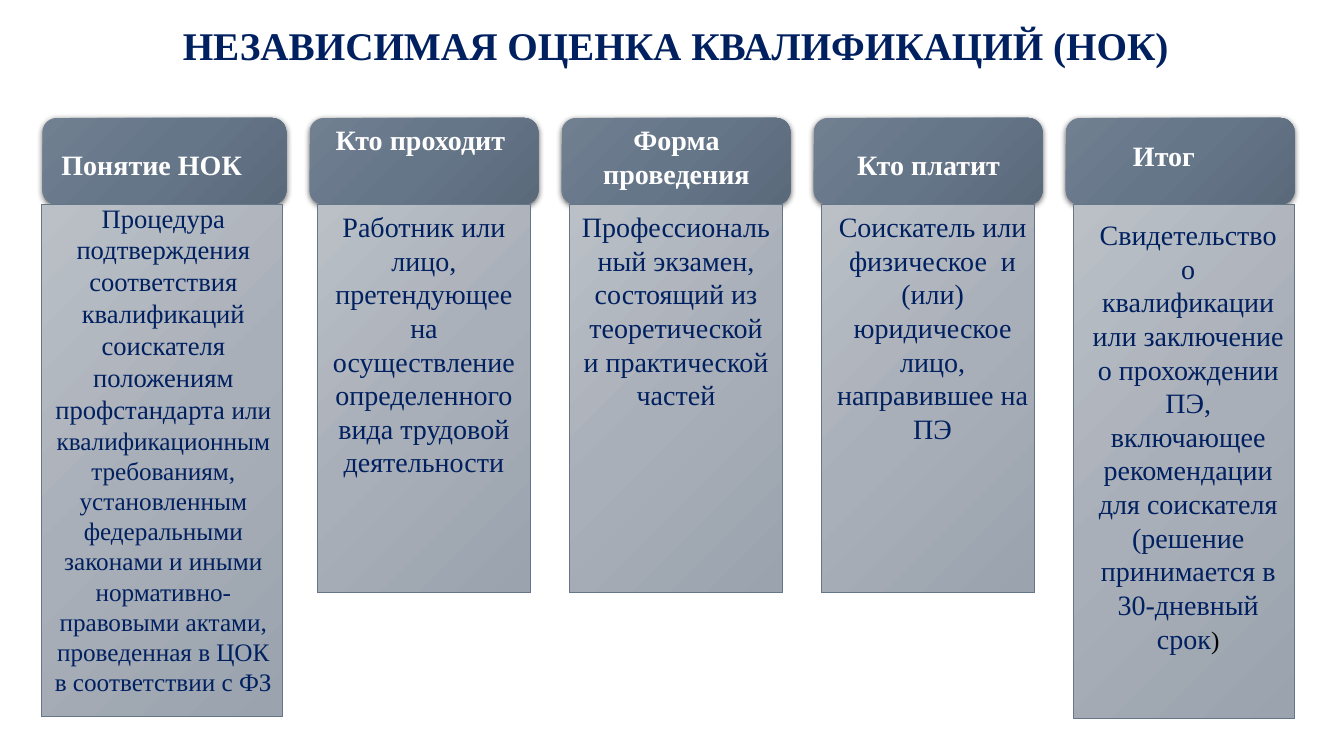
from copy import deepcopy

from lxml import etree
from pptx import Presentation
from pptx.dml.color import RGBColor
from pptx.enum.shapes import MSO_SHAPE
from pptx.enum.text import MSO_AUTO_SIZE, PP_ALIGN
from pptx.oxml import parse_xml
from pptx.oxml.ns import nsdecls
from pptx.util import Inches, Pt

NAVY, WHITE, BLACK, SLATE = "002060", "FFFFFF", "000000", "657689"
HEADER_SHADES = ["718091", SLATE, "5B6A7B"]
BODY_SHADES = ["BBC0C7", "A9AFB8", "9AA3AE"]
HEADER_TOP, BODY_TOP = 1.17, 2.03

prs = Presentation()
prs.slide_width, prs.slide_height = Inches(13.33), Inches(7.5)
slide = prs.slides.add_slide(prs.slide_layouts[6])


def add_panel(kind, box, shades):
    panel = slide.shapes.add_shape(kind, *map(Inches, box))
    panel.shadow.inherit = False
    panel.fill.gradient()
    panel.fill.gradient_angle = 315
    first_stop = panel._element.spPr.find(".//{*}gs")
    middle_stop = deepcopy(first_stop)
    middle_stop.set("pos", "50000")
    first_stop.addnext(middle_stop)
    for stop, shade in zip(panel.fill.gradient_stops, shades):
        stop.color.rgb = RGBColor.from_string(shade)
    return panel


def add_text(box, runs, bold=False, grow=True):
    frame = slide.shapes.add_textbox(*map(Inches, box)).text_frame
    frame.word_wrap = True
    frame.auto_size = MSO_AUTO_SIZE.SHAPE_TO_FIT_TEXT if grow else MSO_AUTO_SIZE.NONE
    paragraph = frame.paragraphs[0]
    paragraph.alignment = PP_ALIGN.CENTER
    for text, size, color in runs:
        run = paragraph.add_run()
        run.text = text
        run.font.name = "Times New Roman"
        run.font.size = Pt(size)
        run.font.bold = bold
        run.font.color.rgb = RGBColor.from_string(color)


add_text((0.41, 0.16, 12.68, 0.71),
         [("НЕЗАВИСИМАЯ ОЦЕНКА КВАЛИФИКАЦИЙ (НОК) ", 28, NAVY)], bold=True, grow=False)

columns = [
    ("Понятие НОК", (0.42, 2.42), (0.41, 2.39, 5.08),
     (0.41, 1.41, 2.19, 0.44), (0.44, 1.95, 2.36, 5.37),
     [("Процедура подтверждения соответствия квалификаций соискателя "
       "положениям профстандарта ", 19, NAVY),
      ("или квалификационным требованиям, установленным федеральными законами "
       "и иными нормативно-правовыми актами, проведенная в ЦОК "
       "в соответствии с ФЗ", 18, NAVY)]),
    ("Кто проходит", (3.07, 2.27), (3.15, 2.11, 3.85),
     (3.23, 1.17, 1.88, 0.77), (3.15, 2.03, 2.11, 3.1),
     [("Работник или лицо, претендующее на осуществление определенного "
       "вида трудовой деятельности", 20, NAVY)]),
    ("Форма проведения", (5.57, 2.27), (5.65, 2.11, 3.85),
     (5.73, 1.17, 1.96, 1.11), (5.65, 2.03, 2.11, 2.42),
     [("Профессиональный экзамен, состоящий из теоретической "
       "и практической частей", 20, NAVY)]),
    ("Кто платит", (8.07, 2.27), (8.15, 2.11, 3.85),
     (8.31, 1.41, 1.8, 0.77), (8.16, 2.03, 2.18, 2.79),
     [("Соискатель или физическое  и (или) юридическое лицо, "
       "направившее на ПЭ", 20, NAVY)]),
    ("Итог", (10.57, 2.27), (10.65, 2.19, 5.1),
     (10.96, 1.33, 1.17, 0.77), (10.73, 2.11, 2.11, 4.78),
     [("Свидетельство о квалификации или заключение о прохождении ПЭ, "
       "включающее рекомендации для соискателя (решение принимается "
       "в 30-дневный срок", 20, NAVY),
      (")", 18, BLACK)]),
]

for heading, header_span, body_span, heading_box, details_box, details in columns:
    header_left, header_width = header_span
    header = add_panel(MSO_SHAPE.ROUNDED_RECTANGLE,
                       (header_left, HEADER_TOP, header_width, 0.86), HEADER_SHADES)
    header.line.fill.background()
    header._element.spPr.find("{*}effectLst").append(parse_xml(
        f'<a:outerShdw {nsdecls("a")} blurRad="{Pt(4.5)}" dist="{Pt(1.5)}" dir="5400000" '
        f'algn="ctr" rotWithShape="0"><a:srgbClr val="{BLACK}"><a:alpha val="63000"/>'
        '</a:srgbClr></a:outerShdw>'))

    body_left, body_width, body_height = body_span
    body = add_panel(MSO_SHAPE.RECTANGLE,
                     (body_left, BODY_TOP, body_width, body_height), BODY_SHADES)
    body.line.color.rgb = RGBColor.from_string(SLATE)
    body.line.width = Pt(0.75)

    add_text(heading_box, [(heading, 20, WHITE)], bold=True)
    add_text(details_box, details)

prs.save("out.pptx")
